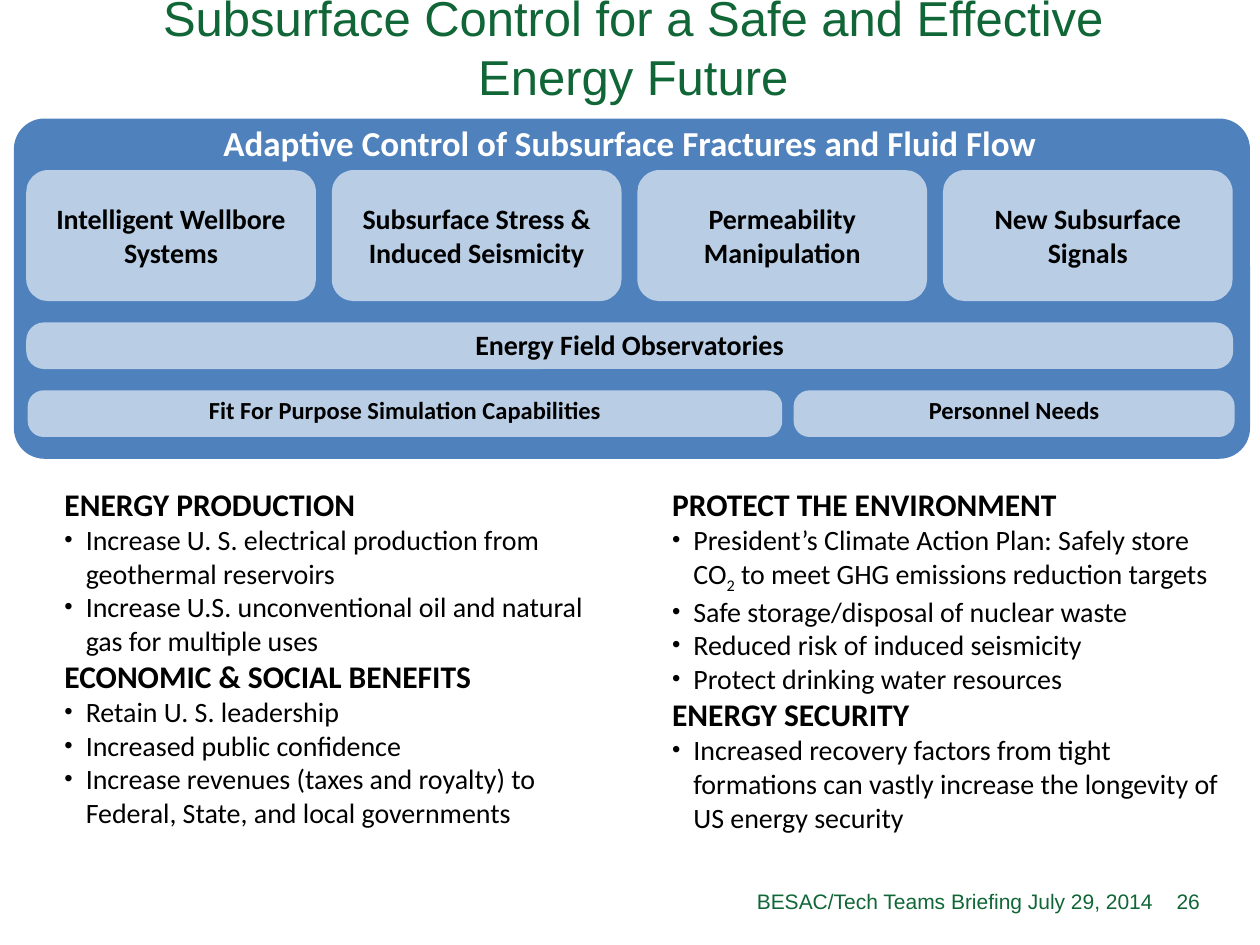
from lxml import etree
from pptx import Presentation
from pptx.dml.color import RGBColor
from pptx.enum import shapes, text
from pptx.oxml.ns import qn
from pptx.util import Cm, Pt

GREEN, BLUE, PALE_BLUE = "106636", "4F81BD", "B9CDE5"
BLACK, WHITE = "000000", "FFFFFF"
CENTER, RIGHT = text.PP_ALIGN.CENTER, text.PP_ALIGN.RIGHT
MIDDLE, TOP = text.MSO_ANCHOR.MIDDLE, text.MSO_ANCHOR.TOP


def format_line(shape, wording, size, color, name="Calibri", bold=False,
                align=CENTER, anchor=MIDDLE):
    frame = shape.text_frame
    frame.text = wording
    frame.word_wrap = True
    frame.auto_size = text.MSO_AUTO_SIZE.NONE
    frame.vertical_anchor = anchor
    paragraph = frame.paragraphs[0]
    paragraph.alignment = align
    font = paragraph.runs[0].font
    font.name, font.size, font.bold = name, Pt(size), bold
    font.color.rgb = RGBColor.from_string(color)


def add_panel(left, top, width, height, fill, rounding):
    panel = slide.shapes.add_shape(shapes.MSO_SHAPE.ROUNDED_RECTANGLE,
                                   Cm(left), Cm(top), Cm(width), Cm(height))
    panel.adjustments[0] = rounding
    panel.shadow.inherit = False
    panel.fill.solid()
    panel.fill.fore_color.rgb = RGBColor.from_string(fill)
    panel.line.fill.background()
    return panel


presentation = Presentation()
presentation.slide_width, presentation.slide_height = Cm(25.4), Cm(19.05)
slide = presentation.slides.add_slide(presentation.slide_layouts[5])

# Title
title = slide.shapes.title
title.left, title.top, title.width, title.height = Cm(1.65), Cm(0.08), Cm(22.23), Cm(1.7)
format_line(title, "Subsurface Control for a Safe and Effective Energy Future",
            28, GREEN, "Arial")

# Blue backdrop with its heading
add_panel(0.28, 2.39, 24.92, 6.86, BLUE, 0.09)
heading = slide.shapes.add_textbox(Cm(3.81), Cm(2.49), Cm(17.78), Cm(0.76))
format_line(heading, "Adaptive Control of Subsurface Fractures and Fluid Flow",
            20, WHITE, bold=True)

# Row of four topics
topics = ["Intelligent Wellbore Systems", "Subsurface Stress & Induced Seismicity",
          "Permeability Manipulation", "New Subsurface Signals"]
for column, topic in enumerate(topics):
    tile = add_panel(0.53 + column * 6.16, 3.43, 5.84, 2.64, PALE_BLUE, 0.167)
    format_line(tile, topic, 16, BLACK, bold=True)

# Supporting bars: left, top, width, rounding, size, wording
bars = [
    (0.53, 6.5, 24.33, 0.38, 16, "Energy Field Observatories"),
    (0.56, 7.87, 15.21, 0.34, 14, "Fit For Purpose Simulation Capabilities"),
    (16, 7.87, 8.89, 0.34, 14, "Personnel Needs"),
]
for left, top, width, rounding, size, wording in bars:
    bar = add_panel(left, top, width, 0.94, PALE_BLUE, rounding)
    format_line(bar, wording, size, BLACK, bold=True, anchor=TOP)
    bar.text_frame.margin_top = 0

# Benefit columns: each section is a heading and its bullets, "_" marks a subscript
columns = [
    (1.09, 10.97, [
        ("ENERGY PRODUCTION", [
            "Increase U. S. electrical production from geothermal reservoirs",
            "Increase U.S. unconventional oil and natural gas for multiple uses"]),
        ("ECONOMIC & SOCIAL BENEFITS", [
            "Retain U. S. leadership",
            "Increased public confidence",
            "Increase revenues (taxes and royalty) to Federal, State, and local governments"]),
    ]),
    (13.34, 11.25, [
        ("PROTECT THE ENVIRONMENT", [
            "President’s Climate Action Plan: Safely store CO_2_ to meet GHG emissions "
            "reduction targets",
            "Safe storage/disposal of nuclear waste",
            "Reduced risk of induced seismicity",
            "Protect drinking water resources"]),
        ("ENERGY SECURITY", [
            "Increased recovery factors from tight formations can vastly increase the "
            "longevity of US energy security"]),
    ]),
]
for left, width, sections in columns:
    frame = slide.shapes.add_textbox(Cm(left), Cm(9.65), Cm(width), Cm(7.15)).text_frame
    frame.word_wrap = True
    frame.margin_left = frame.margin_right = 0
    lines = []
    for section, bullets in sections:
        lines.append((section, True))
        lines.extend((bullet, False) for bullet in bullets)
    for index, (wording, is_heading) in enumerate(lines):
        paragraph = frame.add_paragraph() if index else frame.paragraphs[0]
        properties = paragraph._p.get_or_add_pPr()
        margin, indent = (0.97, -0.76) if is_heading else (0.64, -0.43)
        properties.set("marL", str(Cm(margin)))
        properties.set("indent", str(Cm(indent)))
        if not is_heading:
            etree.SubElement(properties, qn("a:buSzPct"), val="85000")
            etree.SubElement(properties, qn("a:buFont"), typeface="Arial")
            etree.SubElement(properties, qn("a:buChar"), char="•")
        for part, piece in enumerate(wording.split("_")):
            run = paragraph.add_run()
            run.text = piece
            run.font.name, run.font.bold = "Calibri", is_heading
            run.font.size = Pt(18 if is_heading else 16)
            run.font.color.rgb = RGBColor.from_string(BLACK)
            if part % 2:
                run._r.get_or_add_rPr().set("baseline", "-25000")

# Footer and slide number
for left, width, wording in [(8.69, 14.81, "BESAC/Tech Teams Briefing July 29, 2014"),
                             (23.37, 1.07, "26")]:
    footer = slide.shapes.add_textbox(Cm(left), Cm(17.65), Cm(width), Cm(1.02))
    format_line(footer, wording, 12, GREEN, "Arial", align=RIGHT)

presentation.save("out.pptx")
